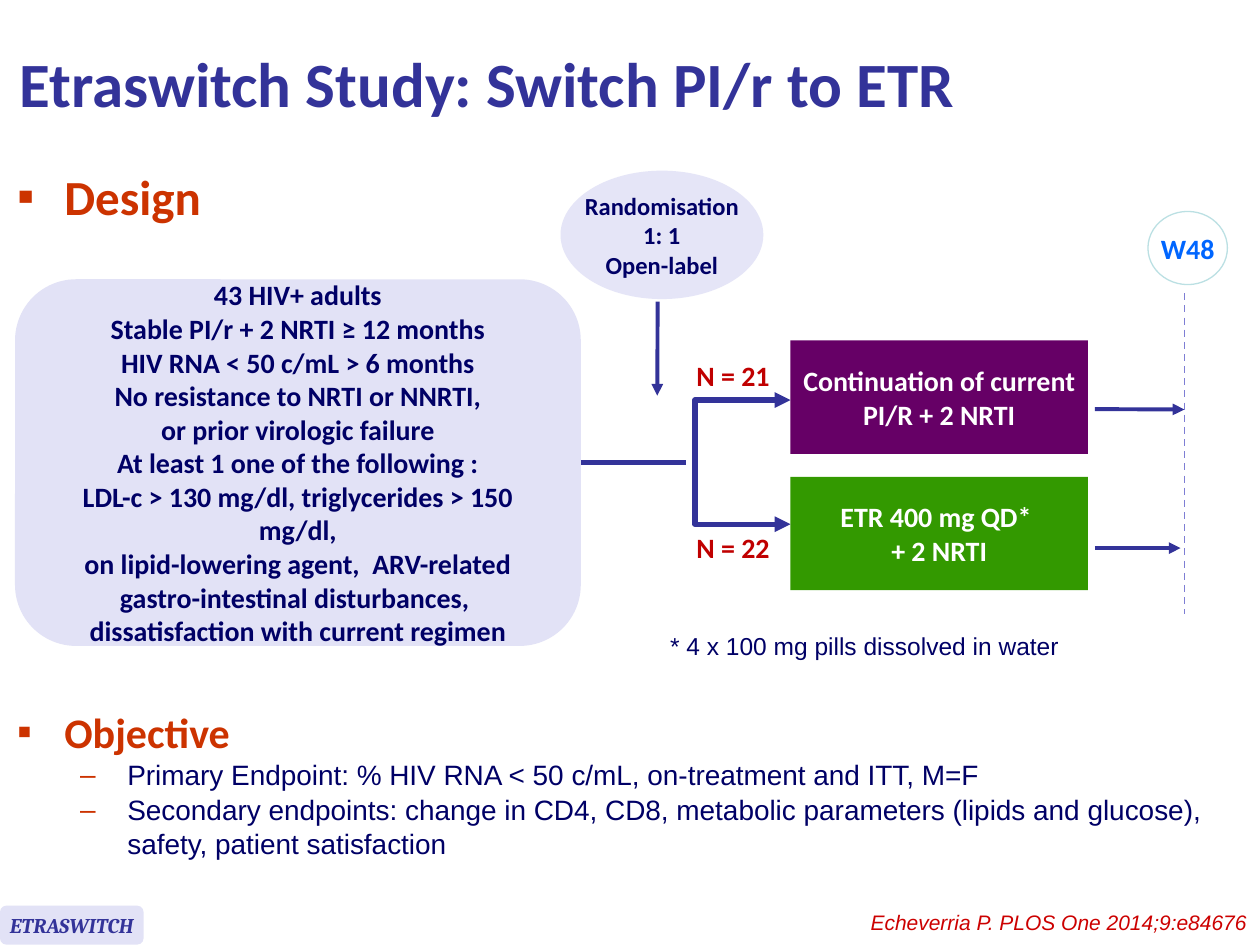
import pptx
import pptx.util
import pptx.dml.color
import pptx.enum.dml
import pptx.enum.shapes
import pptx.enum.text
import pptx.oxml
import pptx.oxml.ns

Pt = pptx.util.Pt
RGBColor = pptx.dml.color.RGBColor
SHAPE = pptx.enum.shapes.MSO_SHAPE
ALIGN = pptx.enum.text.PP_ALIGN
ANCHOR = pptx.enum.text.MSO_ANCHOR

INDIGO = RGBColor(0x33, 0x33, 0x99)
NAVY = RGBColor(0x00, 0x00, 0x66)
RUST = RGBColor(0xCC, 0x33, 0x00)
CRIMSON = RGBColor(0xC0, 0x00, 0x00)
RED = RGBColor(0xCC, 0x00, 0x00)
BLUE = RGBColor(0x00, 0x66, 0xFF)
WHITE = RGBColor(0xFF, 0xFF, 0xFF)
PURPLE = RGBColor(0x66, 0x00, 0x66)
GREEN = RGBColor(0x33, 0x99, 0x00)
LAVENDER = RGBColor(0xE2, 0xE2, 0xF6)
PALE_LAVENDER = RGBColor(0xE5, 0xE5, 0xF7)
PALE_TEAL = RGBColor(0xBB, 0xE0, 0xE3)
VIOLET = RGBColor(0x7E, 0x7E, 0xD4)


def write(sp, lines, color, fmt, align=ALIGN.LEFT, wrap=True,
          anchor=ANCHOR.MIDDLE, bullet=None, level=0, append=False):
    """Put formatted paragraphs into a shape; bullets hang by 27 pt."""
    tf = sp.text_frame
    tf.word_wrap = wrap
    tf.vertical_anchor = anchor
    for i, line in enumerate(lines):
        p = tf.add_paragraph() if append or i else tf.paragraphs[0]
        p.text = line
        p.alignment = align
        if bullet:
            pPr = p._p.get_or_add_pPr()
            pPr.set("marL", str(Pt(27 + 36 * level)))
            pPr.set("indent", str(-Pt(27)))
            for xml in (f'<a:buClr %s><a:srgbClr val="{RUST}"/></a:buClr>',
                        '<a:buFont %s typeface="Arial"/>',
                        f'<a:buChar %s char="{bullet}"/>'):
                pPr.append(pptx.oxml.parse_xml(xml % pptx.oxml.ns.nsdecls("a")))
            p.level = level
            if append:
                p.space_before = Pt(0.8)
        for r in p.runs:
            for name, value in fmt.items():
                setattr(r.font, name, value)
            r.font.color.rgb = color


def style_line(sp, color, width, ends=()):
    """Colour a line, drop its shadow and add arrowheads."""
    sp.line.color.rgb = color
    sp.line.width = Pt(width)
    ns = pptx.oxml.ns.nsdecls("a")
    for end in ends:
        sp.line._get_or_add_ln().append(
            pptx.oxml.parse_xml(f'<a:{end} {ns} type="triangle"/>'))
    sp._element.spPr.append(pptx.oxml.parse_xml(f"<a:effectLst {ns}/>"))


prs = pptx.Presentation()
prs.slide_width, prs.slide_height = Pt(720), Pt(540)
s = prs.slides.add_slide(prs.slide_layouts[6])

calibri = {"name": "Calibri", "size": Pt(16), "bold": True}
arial = {"name": "Arial", "size": Pt(16), "bold": False}

# Title, N labels, footnote and citation
texts = [
    ((4.3, 3.6, 645, 87), "Etraswitch Study: Switch PI/r to ETR", INDIGO,
     calibri | {"size": Pt(36)}, ALIGN.LEFT, True),
    ((390.4, 201, 57, 26.6), "N = 21", CRIMSON, calibri, ALIGN.CENTER, False),
    ((390.4, 299.5, 57, 26.6), "N = 22", CRIMSON, calibri, ALIGN.CENTER, False),
    ((375.8, 356.7, 239, 24.5), "* 4 x 100 mg pills dissolved in water", NAVY,
     arial | {"size": Pt(14)}, ALIGN.LEFT, False),
    ((293.8, 516.2, 426, 21.6), "Echeverria P. PLOS One 2014;9:e84676", RED,
     arial | {"size": Pt(12), "italic": True}, ALIGN.RIGHT, True),
]
for box, text, color, fmt, align, wrap in texts:
    sp = s.shapes.add_textbox(*map(Pt, box))
    write(sp, [text], color, fmt, align, wrap)

# Design and objective sections
sp = s.shapes.add_textbox(Pt(2.7), Pt(91.4), Pt(142.6), Pt(45.4))
write(sp, ["Design"], RUST, calibri | {"size": Pt(28)},
      anchor=ANCHOR.TOP, bullet="▪")
sp = s.shapes.add_textbox(Pt(2.7), Pt(399.9), Pt(712), Pt(108.7))
write(sp, ["Objective"], RUST, calibri | {"size": Pt(24)},
      anchor=ANCHOR.TOP, bullet="▪")
write(sp, ["Primary Endpoint: % HIV RNA < 50 c/mL, on-treatment and ITT, M=F",
           "Secondary endpoints: change in CD4, CD8, metabolic parameters "
           "(lipids and glucose), safety, patient satisfaction"],
      NAVY, arial, anchor=ANCHOR.TOP, bullet="–", level=1, append=True)

# Filled shapes: population, randomisation, arms, week 48, study tag
population = [
    "43 HIV+ adults", "Stable PI/r + 2 NRTI ≥ 12 months",
    "HIV RNA < 50 c/mL > 6 months", "No resistance to NRTI or NNRTI,",
    "or prior virologic failure", "At least 1 one of the following :",
    "LDL-c > 130 mg/dl, triglycerides > 150 mg/dl,",
    "on lipid-lowering agent,  ARV-related",
    "gastro-intestinal disturbances, ", "dissatisfaction with current regimen",
]
tag_fmt = {"name": "Cambria", "size": Pt(12), "bold": True, "italic": True}
shapes = [
    ("population", SHAPE.ROUNDED_RECTANGLE, (8.6, 159.6, 323.3, 209.5),
     LAVENDER, population, NAVY, calibri, True),
    ("randomisation", SHAPE.OVAL, (320.3, 97.5, 115.9, 73.4), PALE_LAVENDER,
     ["Randomisation", "1: 1", "Open-label"], NAVY,
     calibri | {"size": Pt(14)}, False),
    ("continuation", SHAPE.RECTANGLE, (451.7, 194.6, 170, 64.8), PURPLE,
     ["Continuation of current PI/R + 2 NRTI"], WHITE, calibri, True),
    ("switch", SHAPE.RECTANGLE, (451.7, 272.5, 170, 64.8), GREEN,
     ["ETR 400 mg QD* \v+ 2 NRTI"], WHITE, calibri, True),
    ("week 48", SHAPE.OVAL, (656, 120.8, 45.4, 41.8), WHITE,
     ["W48"], BLUE, calibri, False),
    ("study tag", SHAPE.ROUNDED_RECTANGLE, (0, 517.5, 82.1, 22.3), LAVENDER,
     ["ETRASWITCH"], INDIGO, tag_fmt, False),
]
parts = {}
for name, kind, box, fill, lines, color, fmt, wrap in shapes:
    sp = parts[name] = s.shapes.add_shape(kind, *map(Pt, box))
    sp.shadow.inherit = False
    sp.fill.solid()
    sp.fill.fore_color.rgb = fill
    sp.line.fill.background()
    write(sp, lines, color, fmt, ALIGN.CENTER, wrap)
parts["week 48"].line.color.rgb = PALE_TEAL
parts["week 48"].line.width = Pt(0.75)

# Straight lines and arrows
connectors = [
    ((375.8, 172.3, 375.6, 226.1), INDIGO, 2.25, ["tailEnd"]),
    ((625.7, 233.8, 676.8, 234), INDIGO, 2.25, ["tailEnd"]),
    ((625.7, 313.2, 674.6, 313.2), INDIGO, 2.25, ["tailEnd"]),
    ((676.8, 167.6, 676.8, 350.6), VIOLET, 1, []),
    ((331.9, 264.35, 391.9, 264.35), INDIGO, 3, []),
]
for ends, color, width, heads in connectors:
    sp = s.shapes.add_connector(pptx.enum.shapes.MSO_CONNECTOR.STRAIGHT,
                                *map(Pt, ends))
    if color == VIOLET:
        sp.line.dash_style = pptx.enum.dml.MSO_LINE.DASH
    if width == 3:
        sp.begin_connect(parts["population"], 3)
    style_line(sp, color, width, heads)

# Fork leading to both arms
fork = s.shapes.build_freeform(Pt(451.7), Pt(228.6))
fork.add_line_segments([(Pt(397.2), Pt(228.6)), (Pt(397.2), Pt(299.5)),
                        (Pt(451.7), Pt(299.5))], close=False)
sp = fork.convert_to_shape()
sp.fill.background()
style_line(sp, INDIGO, 3, ["headEnd", "tailEnd"])

prs.save("out.pptx")
